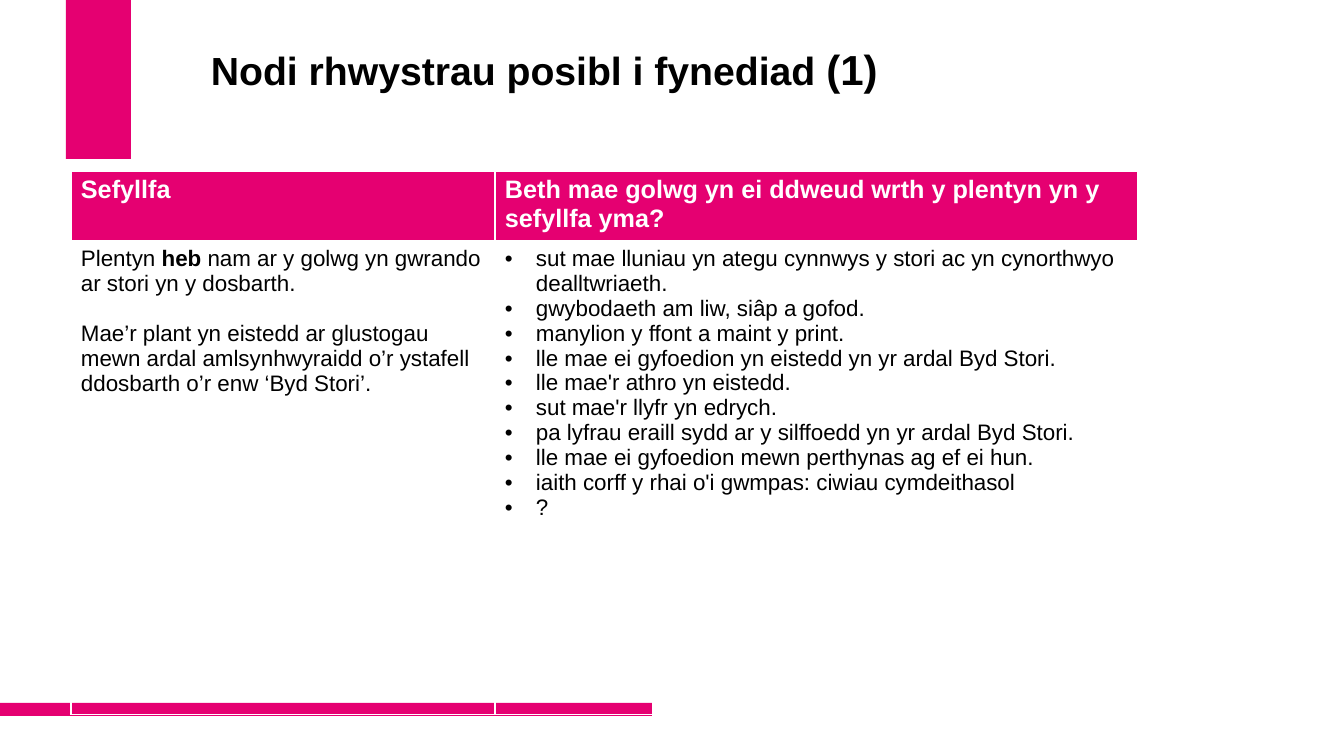
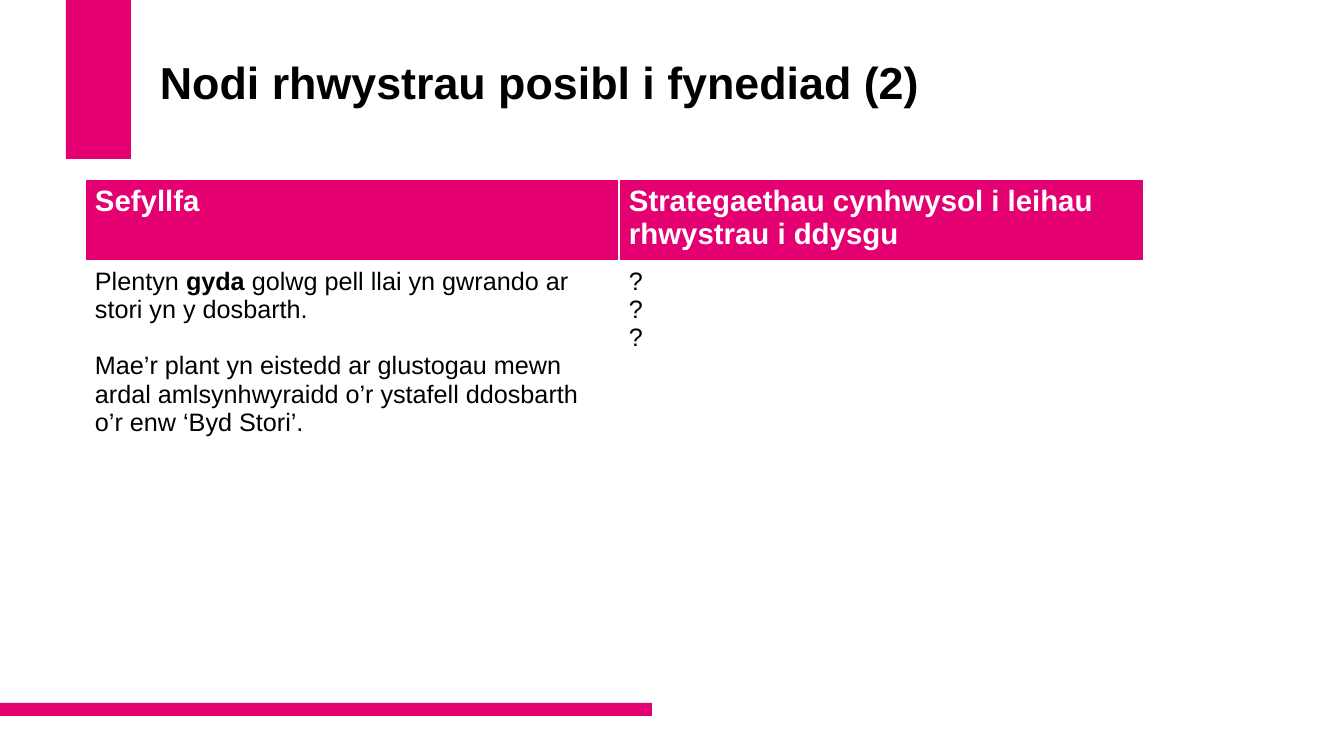
import dataclasses

import lxml.etree
import pptx
import pptx.dml.color
import pptx.enum.shapes
import pptx.enum.text
import pptx.oxml
import pptx.oxml.ns
import pptx.util

SCALE = 914400 / 100.8


def px(n):
    return pptx.util.Emu(round(n * SCALE))


@dataclasses.dataclass(frozen=True)
class Theme:
    font: str = "Arial"
    pink: str = "E50071"
    white: str = "FFFFFF"
    black: str = "000000"
    thin: int = 1
    thick: int = 3
    title: int = 28
    title_number: int = 30
    title_large: int = 32
    head: int = 18
    head_large: int = 21
    body: int = 16
    body_large: int = 18


def rgb(value):
    return pptx.dml.color.RGBColor.from_string(value)


def sub(parent, tag, **attrs):
    return lxml.etree.SubElement(parent, pptx.oxml.ns.qn(tag), **attrs)


class Deck:
    def __init__(self, theme):
        self.theme = theme
        self.prs = pptx.Presentation()
        self.prs.slide_width, self.prs.slide_height = px(1344), px(756)
        self.s = None

    def slide(self):
        self.s = self.prs.slides.add_slide(self.prs.slide_layouts[6])
        self.band(66, 0, 65, 159)
        self.band(0, 703, 652, 13)

    def band(self, x, y, w, h):
        sp = self.s.shapes.add_shape(
            pptx.enum.shapes.MSO_SHAPE.RECTANGLE, px(x), px(y), px(w), px(h))
        sp.shadow.inherit = False
        sp.fill.solid()
        sp.fill.fore_color.rgb = rgb(self.theme.pink)
        sp.line.fill.background()

    def style(self, p, size, color, bold):
        p.font.name = self.theme.font
        p.font.size = pptx.util.Pt(size) if size else None
        p.font.color.rgb = rgb(color)
        p.font.bold = bold

    def title(self, x, y, *runs):
        tf = self.s.shapes.add_textbox(px(x), px(y), px(968), px(80)).text_frame
        tf.word_wrap = True
        tf.vertical_anchor = pptx.enum.text.MSO_ANCHOR.MIDDLE
        p = tf.paragraphs[0]
        p.line_spacing = 0.9
        sizes = {size for _, size in runs}
        self.style(p, sizes.pop() if len(sizes) == 1 else None, self.theme.black, True)
        for text, size in runs:
            r = p.add_run()
            r.text = text
            if sizes:
                r.font.size = pptx.util.Pt(size)

    def border(self, cell, bottom):
        tcPr = cell._tc.get_or_add_tcPr()
        widths = {"L": self.theme.thin, "R": self.theme.thin,
                  "T": self.theme.thin, "B": bottom}
        for i, (side, width) in enumerate(widths.items()):
            ln = sub(tcPr, f"a:ln{side}", w=str(pptx.util.Pt(width)))
            sub(sub(ln, "a:solidFill"), "a:srgbClr", val=self.theme.white)
            tcPr.insert(i, ln)

    def bullet(self, p):
        pPr = p._p.get_or_add_pPr()
        indent = px(31)
        pPr.set("marL", str(indent))
        pPr.set("indent", str(-indent))
        sub(pPr, "a:buFont", typeface=self.theme.font)
        sub(pPr, "a:buChar", char="•")

    def cell(self, cell, texts, size, header=False, bullets=False, gap=0, inset=5):
        theme = self.theme
        cell.margin_left = cell.margin_right = px(10)
        cell.margin_top = cell.margin_bottom = px(inset)
        cell.fill.solid()
        cell.fill.fore_color.rgb = rgb(theme.pink if header else theme.white)
        self.border(cell, theme.thick if header else theme.thin)
        tf = cell.text_frame
        for i, text in enumerate(texts):
            p = tf.add_paragraph() if i else tf.paragraphs[0]
            if i and gap:
                p.space_before = pptx.util.Pt(gap)
            if bullets:
                self.bullet(p)
            self.style(p, size, theme.white if header else theme.black, header)
            for j, part in enumerate(text.split("**")):
                r = p.add_run()
                r.text = part
                if j % 2:
                    r.font.bold = True

    def table(self, x, y, cols, rows, heads, situation, answers,
              head_size, body_size, gap, inset, bullets=False):
        table = self.s.shapes.add_table(
            len(rows), len(cols), px(x), px(y), px(sum(cols)), px(sum(rows))).table
        table.first_row = table.horz_banding = False
        for column, width in zip(table.columns, cols):
            column.width = px(width)
        for row, height in zip(table.rows, rows):
            row.height = px(height)
        for i, head in enumerate(heads):
            self.cell(table.cell(0, i), [head], head_size, header=True, inset=inset)
        self.cell(table.cell(1, 0), situation, body_size, gap=gap, inset=inset)
        self.cell(table.cell(1, 1), answers, body_size, bullets=bullets, inset=inset)
        for row in range(2, len(rows)):
            for col in range(len(cols)):
                cell = table.cell(row, col)
                cell.fill.background()
                self.border(cell, self.theme.thin)


SETTING = ("Mae’r plant yn eistedd ar glustogau mewn ardal amlsynhwyraidd "
           "o’r ystafell ddosbarth o’r enw ‘Byd Stori’.")

SIGHT_CUES = [
    "sut mae lluniau yn ategu cynnwys y stori ac yn cynorthwyo dealltwriaeth.",
    "gwybodaeth am liw, siâp a gofod.",
    "manylion y ffont a maint y print.",
    "lle mae ei gyfoedion yn eistedd yn yr ardal Byd Stori.",
    "lle mae'r athro yn eistedd.",
    "sut mae'r llyfr yn edrych.",
    "pa lyfrau eraill sydd ar y silffoedd yn yr ardal Byd Stori.",
    "lle mae ei gyfoedion mewn perthynas ag ef ei hun.",
    "iaith corff y rhai o'i gwmpas: ciwiau cymdeithasol",
    "?",
]


def main():
    theme = Theme()
    deck = Deck(theme)

    deck.slide()
    deck.title(201, 32, ("Nodi rhwystrau posibl i fynediad ", theme.title),
               ("(1)", theme.title_number))
    deck.table(
        71, 171, [424, 643], [65, 430, 43],
        ["Sefyllfa", "Beth mae golwg yn ei ddweud wrth y plentyn yn y sefyllfa yma?"],
        ["Plentyn **heb** nam ar y golwg yn gwrando ar stori yn y dosbarth.", SETTING],
        SIGHT_CUES, theme.head, theme.body, gap=18, inset=5, bullets=True)

    deck.slide()
    deck.title(150, 45, ("Nodi rhwystrau posibl i fynediad (2)", theme.title_large))
    deck.table(
        85, 179, [534, 525], [74, 200],
        ["Sefyllfa", "Strategaethau cynhwysol i leihau rhwystrau i ddysgu"],
        ["Plentyn **gyda** golwg pell llai yn gwrando ar stori yn y dosbarth.", SETTING],
        ["?"] * 3, theme.head_large, theme.body_large, gap=20, inset=6)

    deck.prs.save("out.pptx")


if __name__ == "__main__":
    main()
